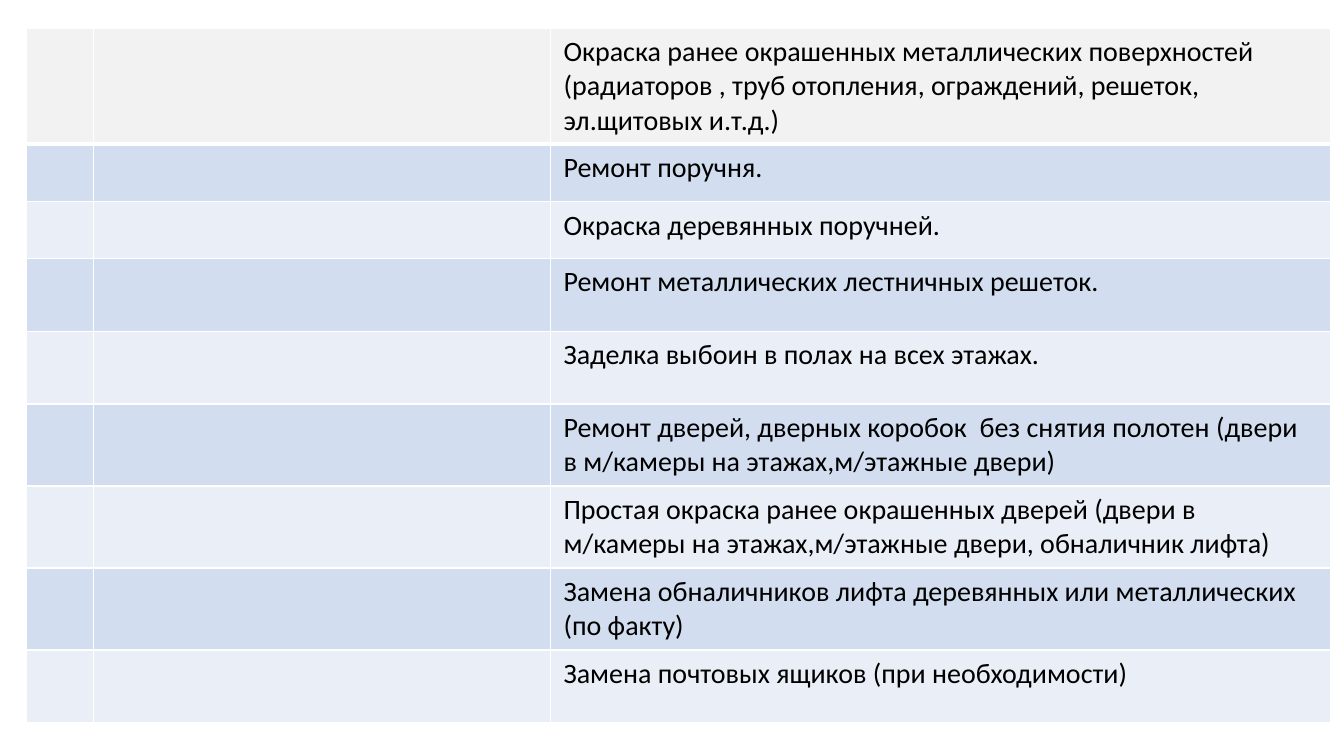
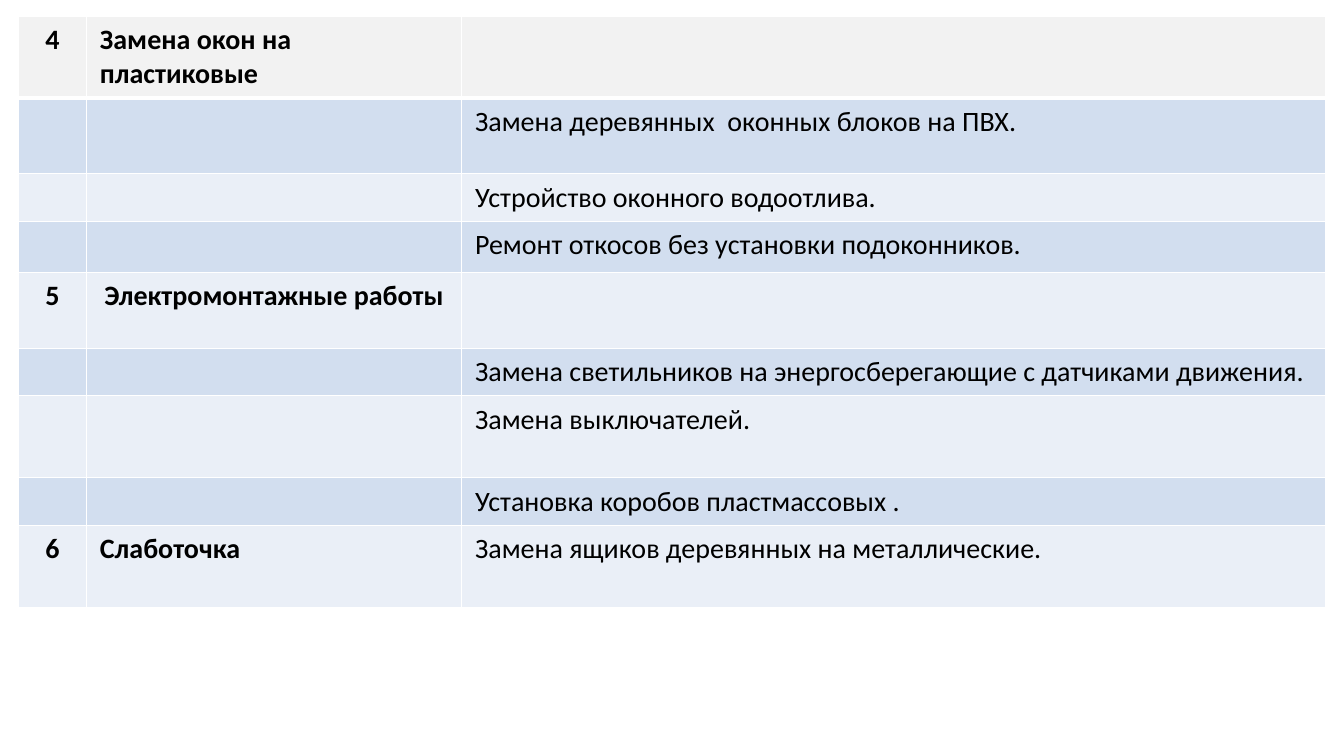
import dataclasses

import lxml.etree
import pptx
import pptx.dml.color
import pptx.enum.text
import pptx.oxml.ns
import pptx.util

Pt = pptx.util.Pt
qn = pptx.oxml.ns.qn
RGB = pptx.dml.color.RGBColor.from_string
LEFT = pptx.enum.text.PP_ALIGN.LEFT
MID = pptx.enum.text.PP_ALIGN.CENTER


# Colours, type and line sizes
@dataclasses.dataclass(frozen=True)
class Theme:
    font: str = "Calibri"
    size: float = 20
    ink: str = "000000"
    head: str = "F2F2F2"
    bands: tuple = ("D2DEEF", "EAEFF7")
    edge: str = "FFFFFF"
    thin: float = 1
    thick: float = 3
    pad_x: float = 9.6
    pad_y: float = 4.8


class Deck:
    def __init__(self, theme):
        self.theme = theme
        self.prs = pptx.Presentation()
        self.prs.slide_width, self.prs.slide_height = Pt(960), Pt(540)
        self.slide = None

    def page(self):
        self.slide = self.prs.slides.add_slide(self.prs.slide_layouts[6])

    def edges(self, cell, first):
        """Draw the four cell borders; the first row has a thick base."""
        props = cell._tc.get_or_add_tcPr()
        for side in "LRTB":
            width = self.theme.thick if first and side == "B" else self.theme.thin
            line = lxml.etree.SubElement(props, qn("a:ln" + side), w=str(Pt(width)))
            fill = lxml.etree.SubElement(line, qn("a:solidFill"))
            lxml.etree.SubElement(fill, qn("a:srgbClr"), val=self.theme.edge)

    def cell(self, cell, text, fill, first, bold, align):
        t = self.theme
        pads = {"margin_left": t.pad_x, "margin_right": t.pad_x,
                "margin_top": t.pad_y, "margin_bottom": t.pad_y}
        for name, value in pads.items():
            setattr(cell, name, Pt(value))
        self.edges(cell, first)
        cell.fill.solid()
        cell.fill.fore_color.rgb = RGB(fill)
        para = cell.text_frame.paragraphs[0]
        para.alignment = align
        if text:
            run = para.add_run()
            run.text = text
            style = {"name": t.font, "size": Pt(t.size), "bold": bold}
            for name, value in style.items():
                setattr(run.font, name, value)
            run.font.color.rgb = RGB(t.ink)

    def table(self, left, top, widths, rows, centred=()):
        """Rows are (height, number, section, work)."""
        t = self.theme
        high = sum(row[0] for row in rows)
        frame = self.slide.shapes.add_table(
            len(rows), len(widths), Pt(left), Pt(top), Pt(sum(widths)), Pt(high))
        grid = frame.table
        for col, width in zip(grid.columns, widths):
            col.width = Pt(width)
        for r, (height, *texts) in enumerate(rows):
            grid.rows[r].height = Pt(height)
            fill = t.bands[(r - 1) % 2] if r else t.head
            for c, text in enumerate(texts):
                align = MID if c == 0 or text in centred else LEFT
                self.cell(grid.cell(r, c), text, fill, r == 0, c < 2, align)


def main():
    deck = Deck(Theme())

    # Painting and repair works
    works = [
        (83, "Окраска ранее окрашенных металлических поверхностей (радиаторов , "
             "труб отопления, ограждений, решеток, эл.щитовых и.т.д.)"),
        (41, "Ремонт поручня."),
        (40.5, "Окраска деревянных поручней."),
        (52, "Ремонт металлических лестничных решеток."),
        (52, "Заделка выбоин в полах на всех этажах."),
        (58.5, "Ремонт дверей, дверных коробок  без снятия полотен "
               "(двери в м/камеры на этажах,м/этажные двери)"),
        (58.5, "Простая окраска ранее окрашенных дверей (двери в м/камеры "
               "на этажах,м/этажные двери, обналичник лифта)"),
        (58.5, "Замена обналичников лифта деревянных или металлических (по факту)"),
        (52, "Замена почтовых ящиков (при необходимости)"),
    ]
    deck.page()
    deck.table(18.5, 20, (48.5, 326, 557.5),
               [(height, "", "", work) for height, work in works])

    # Windows, electrical and low-voltage works
    power = "Электромонтажные работы"
    deck.page()
    deck.table(13.2, 11.5, (48.6, 268, 617), [
        (58.5, "4", "Замена окон на пластиковые", ""),
        (54, "", "", "Замена деревянных  оконных блоков на ПВХ."),
        (34, "", "", "Устройство оконного водоотлива."),
        (36.5, "", "", "Ремонт откосов без установки подоконников."),
        (54, "5", power, ""),
        (34, "", "", "Замена светильников на энергосберегающие с датчиками движения."),
        (58.5, "", "", "Замена выключателей."),
        (34, "", "", "Установка коробов пластмассовых ."),
        (58.5, "6", "Слаботочка", "Замена ящиков деревянных на металлические."),
    ], centred=(power,))

    deck.prs.save("out.pptx")


if __name__ == "__main__":
    main()
